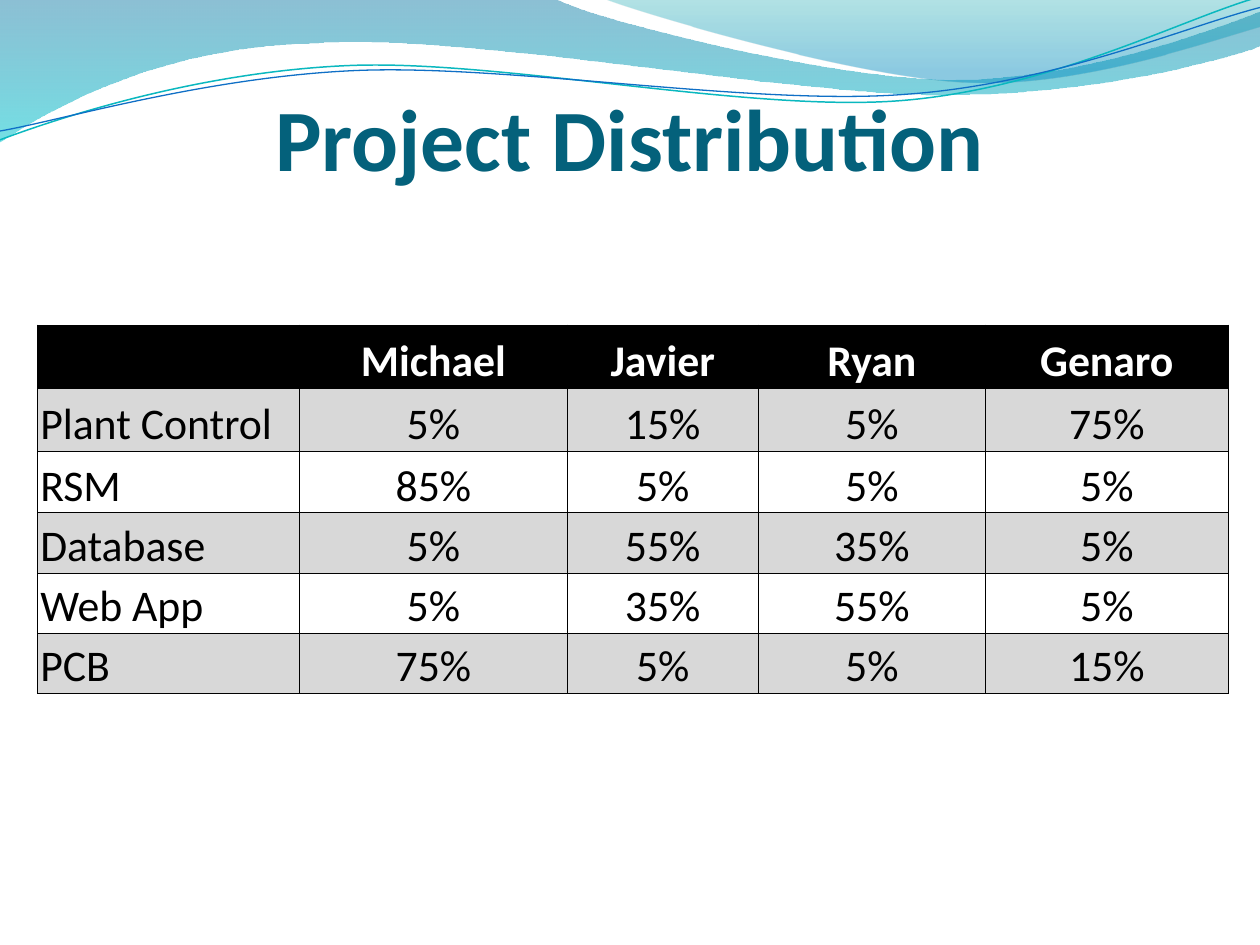
from dataclasses import dataclass
from math import cos, radians, sin

from lxml.etree import SubElement
from pptx import Presentation
from pptx.dml.color import RGBColor
from pptx.enum.text import MSO_ANCHOR, MSO_AUTO_SIZE, PP_ALIGN
from pptx.oxml.ns import qn
from pptx.util import Inches, Pt


@dataclass(frozen=True)
class Theme:
    font: str = "Calibri"
    title_size: int = 50
    table_size: int = 25
    title: str = "04617B"
    text: str = "000000"
    header_text: str = "FFFFFF"
    header_fill: str = "000000"
    band_fill: str = "D8D8D8"
    border: str = "000000"
    teal_line: str = "0AB8BF"
    blue_line: str = "0F6FC6"
    # Gradient stops: position, colour, opacity in percent
    wide_wave: tuple = ((0, "0074A1", 45), (1, "00C6CF", 55))
    corner_wave: tuple = ((0, "00A1A9", 30), (0.8, "008BBF", 45))


THEME = Theme()
CURVE_TILT = -2.7

# Each segment holds an end point, or two control points and an end point.
WIDE_WAVE = [
    [(0, 0)], [(4.4, -0.01)],
    [(4.76, 0.17), (6.64, 0.63), (7.58, 0.63)],
    [(8.53, 0.63), (9.58, 0.26), (10, 0.09)],
    [(10.01, 0.36)],
    [(9.83, 0.44), (8.7, 0.76), (7.46, 0.75)],
    [(6.22, 0.75), (3.82, 0.28), (2.57, 0.34)],
    [(1.29, 0.36), (0.46, 0.83), (-0.01, 1.13)],
    [(0, 0)],
]
CORNER_WAVE = [
    [(4.79, -0.01)],
    [(5.09, 0.11), (6.82, 0.62), (7.69, 0.65)],
    [(8.56, 0.69), (9.61, 0.32), (10, 0.21)],
    [(10, 0)], [(4.79, -0.01)],
]
TEAL_CURVE = [
    [(0, 1.11)],
    [(0.48, 0.93), (1.58, 0.57), (2.77, 0.52)],
    [(3.95, 0.47), (5.93, 0.89), (7.13, 0.8)],
    [(8.33, 0.71), (9.38, 0.15), (9.98, -0.02)],
]
BLUE_CURVE = [
    [(0, 1.04)],
    [(0.47, 0.96), (1.64, 0.61), (2.83, 0.56)],
    [(4.03, 0.51), (5.97, 0.84), (7.17, 0.75)],
    [(8.36, 0.67), (9.41, 0.21), (10, 0.06)],
]

COLUMN_WIDTHS = [2.08, 2.12, 1.52, 1.8, 1.93]
ROW_HEIGHTS = [0.5, 0.5, 0.49, 0.48, 0.48, 0.47]
ROWS = [
    ["", "Michael", "Javier", "Ryan", "Genaro"],
    ["Plant Control", "5%", "15%", "5%", "75%"],
    ["RSM", "85%", "5%", "5%", "5%"],
    ["Database", "5%", "55%", "35%", "5%"],
    ["Web App", "5%", "35%", "55%", "5%"],
    ["PCB", "75%", "5%", "5%", "15%"],
]


def rgb(value):
    return RGBColor.from_string(value)


def turn(point, center, degrees):
    """Turn a point clockwise about a center."""
    dx, dy = point[0] - center[0], point[1] - center[1]
    c, s = cos(radians(degrees)), sin(radians(degrees))
    return center[0] + dx * c - dy * s, center[1] + dx * s + dy * c


def add_outline(shapes, segments, close):
    """Build a freeform, joining the points of each curved segment into a Bézier."""
    start, *points = [(Inches(x), Inches(y)) for segment in segments for x, y in segment]
    builder = shapes.build_freeform(*start)
    builder.add_line_segments(points, close=close)
    shape = builder.convert_to_shape()
    shape.shadow.inherit = False
    lines = iter(list(shape.element.iter(qn("a:lnTo"))))
    for segment in segments[1:]:
        steps = [next(lines) for _ in segment]
        if len(steps) == 3:
            curve = SubElement(steps[0].getparent(), qn("a:cubicBezTo"))
            steps[0].addprevious(curve)
            for step in steps:
                curve.append(step[0])
                step.getparent().remove(step)
    return shape


def add_wave(slide, segments, stops):
    wave = add_outline(slide.shapes, segments, close=True)
    wave.line.fill.background()
    wave.fill.gradient()
    wave.fill.gradient_angle = 270
    for stop, (position, color, _) in zip(wave.fill.gradient_stops, stops):
        stop.position = position
        stop.color.rgb = rgb(color)
    for color, (_, _, opacity) in zip(wave.element.iter(qn("a:srgbClr")), stops):
        SubElement(color, qn("a:alpha"), val=str(opacity * 1000))


def add_curve(group, segments, center, color, width):
    """Draw a level curve and tilt it into place about its center."""
    level = [[turn(point, center, -CURVE_TILT) for point in segment] for segment in segments]
    curve = add_outline(group.shapes, level, close=False)
    curve.rotation = CURVE_TILT
    curve.fill.background()
    curve.line.color.rgb = rgb(color)
    curve.line.width = Pt(width)


def write(frame, text, size, color, bold, align):
    para = frame.paragraphs[0]
    para.text = text
    para.alignment = align
    para.font.name = THEME.font
    para.font.size = Pt(size)
    para.font.bold = bold
    para.font.color.rgb = rgb(color)


def set_title(slide, text):
    title = slide.shapes.title
    title.left, title.top = Inches(0.5), Inches(0.25)
    title.width, title.height = Inches(9), Inches(1.25)
    frame = title.text_frame
    frame.auto_size = MSO_AUTO_SIZE.NONE
    frame.vertical_anchor = MSO_ANCHOR.BOTTOM
    frame.margin_left = frame.margin_right = frame.margin_bottom = 0
    frame.margin_top = Inches(0.05)
    write(frame, text, THEME.title_size, THEME.title, True, PP_ALIGN.CENTER)
    # Bring the title in front of the waves
    title.element.getparent().append(title.element)


def add_borders(cell):
    properties = cell._tc.get_or_add_tcPr()
    for side in ("lnL", "lnR", "lnT", "lnB"):
        line = SubElement(properties, qn(f"a:{side}"), w=str(Pt(0.5)))
        fill = SubElement(line, qn("a:solidFill"))
        SubElement(fill, qn("a:srgbClr"), val=THEME.border)


def format_cell(cell, text, row, column):
    header = row == 0
    cell.vertical_anchor = MSO_ANCHOR.BOTTOM
    cell.margin_left = cell.margin_right = cell.margin_top = Inches(0.02)
    cell.margin_bottom = 0
    add_borders(cell)
    if header or row % 2:
        cell.fill.solid()
        cell.fill.fore_color.rgb = rgb(THEME.header_fill if header else THEME.band_fill)
    else:
        cell.fill.background()
    write(cell.text_frame, text, THEME.table_size,
          THEME.header_text if header else THEME.text, header,
          PP_ALIGN.CENTER if column else PP_ALIGN.LEFT)


def add_distribution_table(slide):
    table = slide.shapes.add_table(
        len(ROWS), len(COLUMN_WIDTHS), Inches(0.3), Inches(2.58),
        Inches(sum(COLUMN_WIDTHS)), Inches(sum(ROW_HEIGHTS))).table
    for column, width in zip(table.columns, COLUMN_WIDTHS):
        column.width = Inches(width)
    for row, height in zip(table.rows, ROW_HEIGHTS):
        row.height = Inches(height)
    for r, texts in enumerate(ROWS):
        for c, text in enumerate(texts):
            format_cell(table.cell(r, c), text, r, c)


def main():
    deck = Presentation()
    deck.slide_width, deck.slide_height = Inches(10), Inches(7.5)
    slide = deck.slides.add_slide(deck.slide_layouts[5])
    add_wave(slide, WIDE_WAVE, THEME.wide_wave)
    add_wave(slide, CORNER_WAVE, THEME.corner_wave)
    curves = slide.shapes.add_group_shape()
    add_curve(curves, TEAL_CURVE, (4.99, 0.58), THEME.teal_line, 0.85)
    add_curve(curves, BLUE_CURVE, (5, 0.59), THEME.blue_line, 0.75)
    set_title(slide, "Project Distribution")
    add_distribution_table(slide)
    deck.save("out.pptx")


if __name__ == "__main__":
    main()
